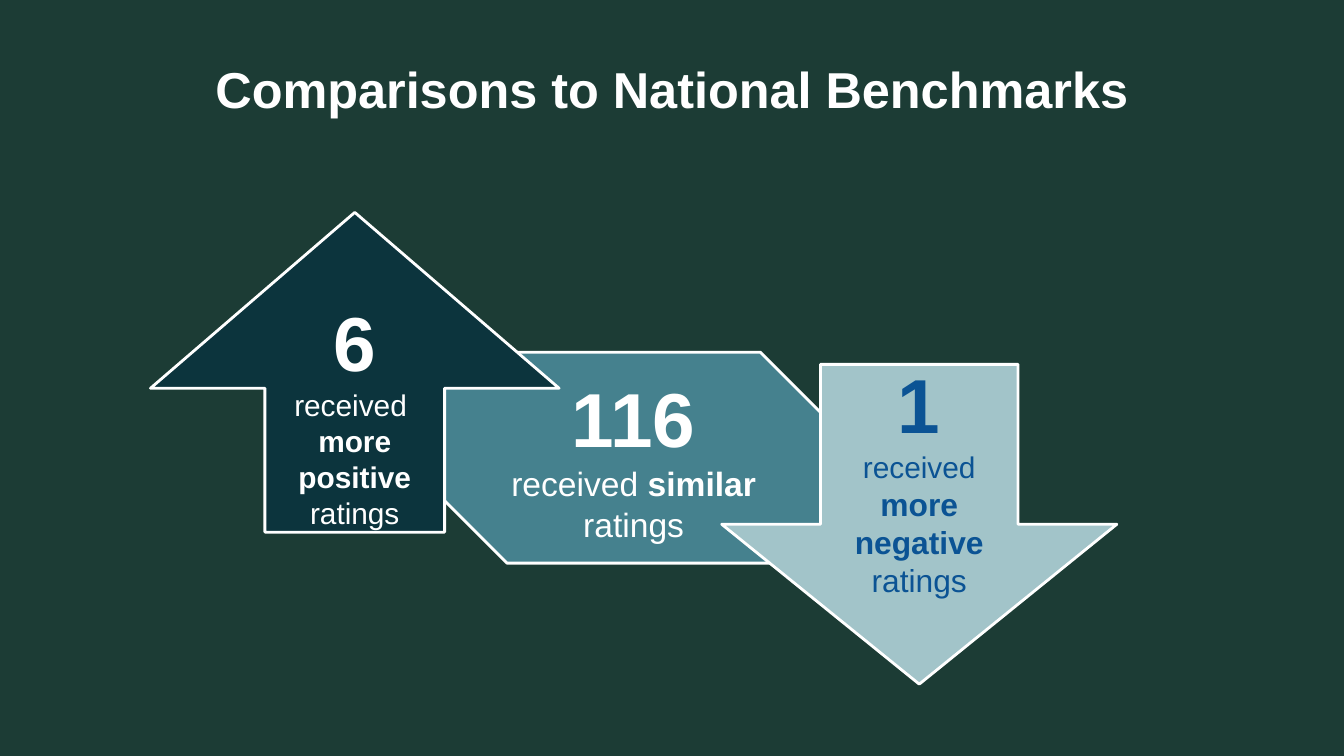
from pptx import Presentation
from pptx.dml.color import RGBColor
from pptx.enum.shapes import MSO_SHAPE
from pptx.enum.text import MSO_ANCHOR, PP_ALIGN
from pptx.util import Inches, Pt

WIDTH, HEIGHT = Inches(10), Inches(5.625)
COLUMN, ROW = WIDTH / 100, HEIGHT / 100
WHITE, BLUE = "FFFFFF", "0B5394"


def color(value):
    return RGBColor.from_string(value)


def place(left, top, width, height):
    return [round(n) for n in (left * COLUMN, top * ROW, width * COLUMN, height * ROW)]


def add_text(para, text, size=16, bold=False, fill=WHITE):
    span = para.add_run()
    span.text = text.rstrip("\n")
    span.font.name = "Arial"
    span.font.size = Pt(size)
    span.font.bold = bold
    span.font.color.rgb = color(fill)
    if text.endswith("\n"):
        para.add_line_break()


def prepare_frame(box, anchor, side=0.0, end=0.04):
    frame = box.text_frame
    frame.word_wrap = True
    frame.vertical_anchor = anchor
    frame.margin_left = frame.margin_right = Inches(side)
    frame.margin_top = frame.margin_bottom = Inches(end)
    frame.paragraphs[0].alignment = PP_ALIGN.CENTER
    return frame


def add_title(page, area, text):
    box = page.shapes.add_textbox(*place(*area))
    para = prepare_frame(box, MSO_ANCHOR.MIDDLE, side=0.07).paragraphs[0]
    para.line_spacing = 0.9
    add_text(para, text, size=27, bold=True)


def add_rating(page, area, kind, adjustments, fill, count, words,
               anchor=MSO_ANCHOR.MIDDLE, end=0.04, ink=WHITE):
    box = page.shapes.add_shape(kind, *place(*area))
    box.shadow.inherit = False
    for index, value in enumerate(adjustments):
        box.adjustments[index] = value
    box.fill.solid()
    box.fill.fore_color.rgb = color(fill)
    box.line.color.rgb = color(WHITE)
    box.line.width = Pt(1.5)
    frame = prepare_frame(box, anchor, end=end)
    add_text(frame.paragraphs[0], count, size=41, bold=True, fill=ink)
    para = frame.add_paragraph()
    para.alignment = PP_ALIGN.CENTER
    for text, size, bold in words:
        add_text(para, text, size=size, bold=bold, fill=ink)


def main():
    deck = Presentation()
    deck.slide_width, deck.slide_height = WIDTH, HEIGHT
    page = deck.slides.add_slide(deck.slide_layouts[6])
    page.background.fill.solid()
    page.background.fill.fore_color.rgb = color("1C3C35")

    add_title(page, (0, 4.1, 100, 16.2), "Comparisons to National Benchmarks")
    add_rating(page, (31.6, 46.6, 31.1, 27.9), MSO_SHAPE.SNIP_2_DIAG_RECTANGLE,
               (0, 0.39), "45818E", "116",
               [("received ", 18, False), ("similar\n", 18, True), ("ratings", 18, False)],
               end=0)
    add_rating(page, (11.2, 28.1, 30.4, 42.3), MSO_SHAPE.UP_ARROW,
               (0.44, 0.55), "0C343D", "6",
               [("received \n", 16, False), ("more positive\n", 16, True),
                ("ratings", 16, False)],
               anchor=MSO_ANCHOR.TOP)
    add_rating(page, (53.7, 48.2, 29.4, 42.3), MSO_SHAPE.DOWN_ARROW,
               (0.5, 0.5), "A2C4C9", "1",
               [("received ", 16, False), ("more negative ", 17, True),
                ("ratings", 17, False)],
               anchor=MSO_ANCHOR.BOTTOM, ink=BLUE)
    deck.save("out.pptx")


if __name__ == "__main__":
    main()
